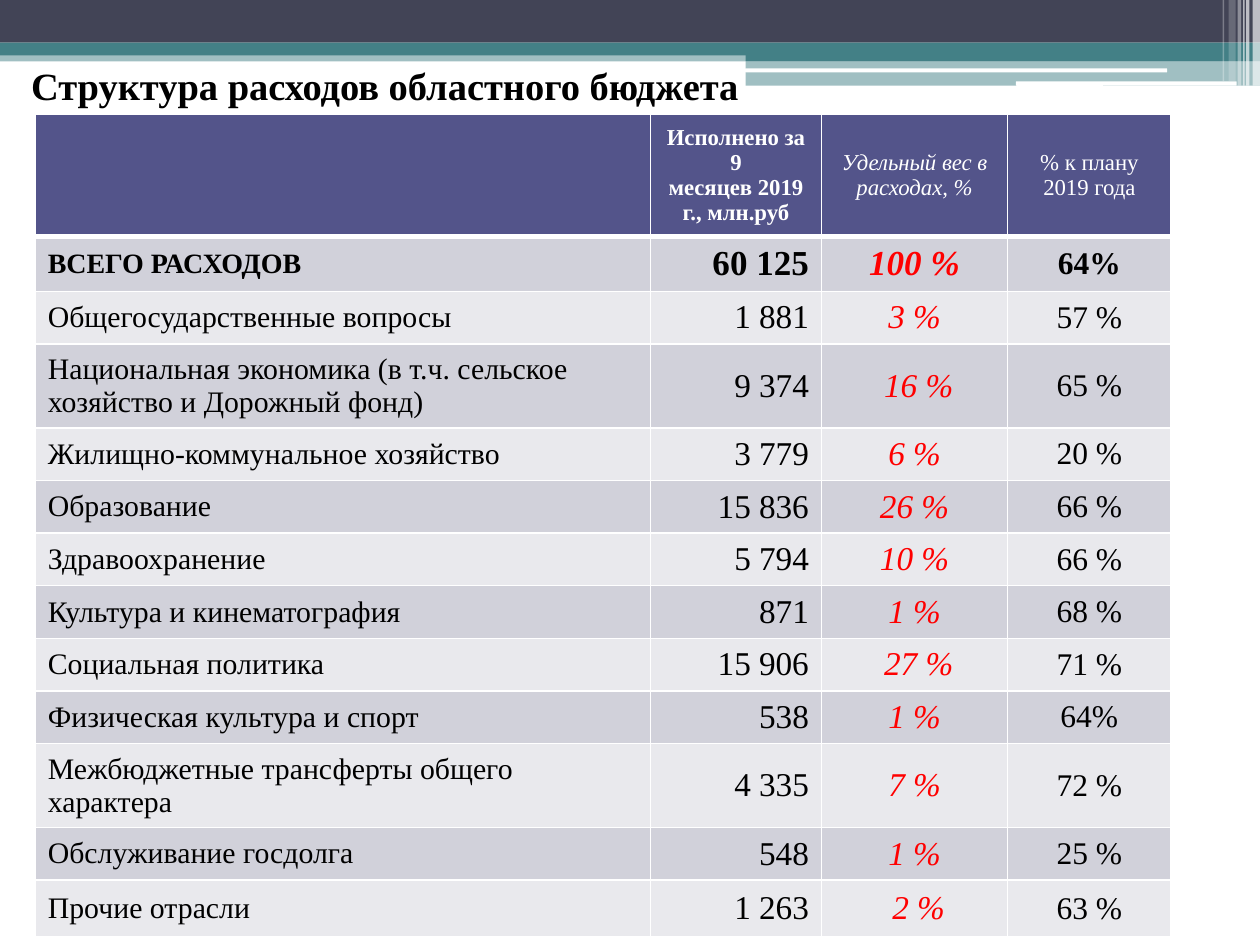
"""Builds a slide with the structure of regional budget expenditure."""
from lxml.etree import SubElement
from pptx import Presentation
from pptx.dml.color import RGBColor
from pptx.enum.shapes import MSO_SHAPE as Shape
from pptx.enum.text import MSO_ANCHOR as Anchor, MSO_AUTO_SIZE as AutoSize, PP_ALIGN as Align
from pptx.oxml.ns import qn
from pptx.util import Cm, Pt


def paint(fill, color):
    fill.solid()
    fill.fore_color.rgb = RGBColor.from_string(color)


def write(frame, text, size=18, color="000000", bold=False, italic=False, align=Align.LEFT):
    frame.word_wrap = True
    paragraph = frame.paragraphs[0]
    paragraph.text = text
    paragraph.alignment = align
    for run in paragraph.runs:
        run.font.name = "Times New Roman"
        run.font.size = Pt(size)
        run.font.bold = bold
        run.font.italic = italic
        paint(run.font.fill, color)


deck = Presentation()
deck.slide_width, deck.slide_height = Cm(25.4), Cm(19.05)
slide = deck.slides.add_slide(deck.slide_layouts[6])

NAVY, TEAL, WHITE = "424456", "438086", "FFFFFF"
bands = [
    (0, 1.02, 25.4, 0.22, TEAL, 50),
    (0, 0, 25.4, 0.86, NAVY, 100),
    (0, 0.86, 25.4, 0.26, TEAL, 100),
    (15.03, 0.98, 10.37, 0.25, TEAL, 100),
    (15.03, 1.23, 10.37, 0.5, TEAL, 50),
]
rounded_bars = [
    (15.02, 1.38, 8.51, 0.08, WHITE, 100),
    (20.48, 1.64, 4.45, 0.09, WHITE, 100),
]
stripes = [
    (left, 0, width, height, WHITE, opacity)
    for left, width, height, opacity in [
        (25.25, 0.15, 1.73, 65), (25.12, 0.07, 1.73, 65), (25.06, 0.03, 1.73, 60),
        (24.95, 0.07, 1.73, 40), (24.77, 0.14, 1.63, 20), (24.65, 0.03, 1.63, 30),
    ]
]
for preset, parts in [(Shape.RECTANGLE, bands), (Shape.ROUNDED_RECTANGLE, rounded_bars),
                      (Shape.RECTANGLE, stripes)]:
    for *box, color, opacity in parts:
        ornament = slide.shapes.add_shape(preset, *map(Cm, box))
        ornament.shadow.inherit = False
        ornament.line.fill.background()
        paint(ornament.fill, color)
        if opacity < 100:
            tint = ornament.element.spPr.find(qn("a:solidFill"))[0]
            SubElement(tint, qn("a:alpha"), val=str(opacity * 1000))

title = slide.shapes.add_textbox(Cm(0.38), Cm(1.12), Cm(24.61), Cm(1.19)).text_frame
write(title, "Структура расходов областного бюджета", size=22, bold=True)
title.auto_size = AutoSize.SHAPE_TO_FIT_TEXT

headings = ["", "Исполнено за\v9\vмесяцев 2019 г., млн.руб", "Удельный вес в расходах, %",
            "% к плану 2019 года"]
SHORT, TALL = 1.06, 1.69
expenses = [
    (1.09, "ВСЕГО РАСХОДОВ", "60 125", "100 %", "64%"),
    (SHORT, "Общегосударственные вопросы", "1 881", "3 %", "57 %"),
    (TALL, "Национальная экономика (в т.ч. сельское хозяйство и Дорожный фонд)",
     "9 374", " 16 %", "65 %"),
    (SHORT, "Жилищно-коммунальное хозяйство", "3 779", "6 %", "20 %"),
    (SHORT, "Образование", "15 836", "26 %", "66 %"),
    (SHORT, "Здравоохранение", "5 794", "10 %", "66 %"),
    (SHORT, "Культура и кинематография", "871", "1 %", "68 %"),
    (SHORT, "Социальная политика", "15 906", " 27 %", "71 %"),
    (SHORT, "Физическая культура и спорт", "538", "1 %", "64%"),
    (TALL, "Межбюджетные трансферты общего характера", "4 335", "7 %", "72 %"),
    (SHORT, "Обслуживание госдолга", "548", "1 %", "25 %"),
    (1.14, "Прочие отрасли", "1 263", " 2 %", "63 %"),
]
rows = [(2.46, *headings), *expenses]
column_widths = [12.4, 3.45, 3.75, 3.3]
column_colors = ["000000", "000000", "FF0000", "000000"]
column_aligns = [Align.LEFT, Align.RIGHT, Align.CENTER, Align.CENTER]
total_sizes, expense_sizes = [16, 20, 20, 18], [17, 19, 19, 18]

budget = slide.shapes.add_table(
    len(rows), len(column_widths), Cm(0.71), Cm(2.31),
    Cm(sum(column_widths)), Cm(sum(row[0] for row in rows))).table
for column, width in zip(budget.columns, column_widths):
    column.width = Cm(width)

for r, (height, *texts) in enumerate(rows):
    budget.rows[r].height = Cm(height)
    for c, text in enumerate(texts):
        cell = budget.cell(r, c)
        cell.vertical_anchor = Anchor.MIDDLE
        properties = cell._tc.get_or_add_tcPr()
        for side in "LRTB":
            thick = (r, side) in [(0, "B"), (1, "T")]
            border = SubElement(properties, qn(f"a:ln{side}"), w=str(Pt(3 if thick else 1)))
            SubElement(SubElement(border, qn("a:solidFill")), qn("a:srgbClr"), val=WHITE)
        if r == 0:
            paint(cell.fill, "53548A")
            write(cell.text_frame, text, size=13, color=WHITE, bold=c == 1, italic=c == 2,
                  align=Align.CENTER)
        else:
            paint(cell.fill, "D1D1DA" if r % 2 else "E9E9ED")
            sizes = total_sizes if r == 1 else expense_sizes
            write(cell.text_frame, text, size=sizes[c], color=column_colors[c], bold=r == 1,
                  italic=c == 2, align=column_aligns[c])

deck.save("out.pptx")
